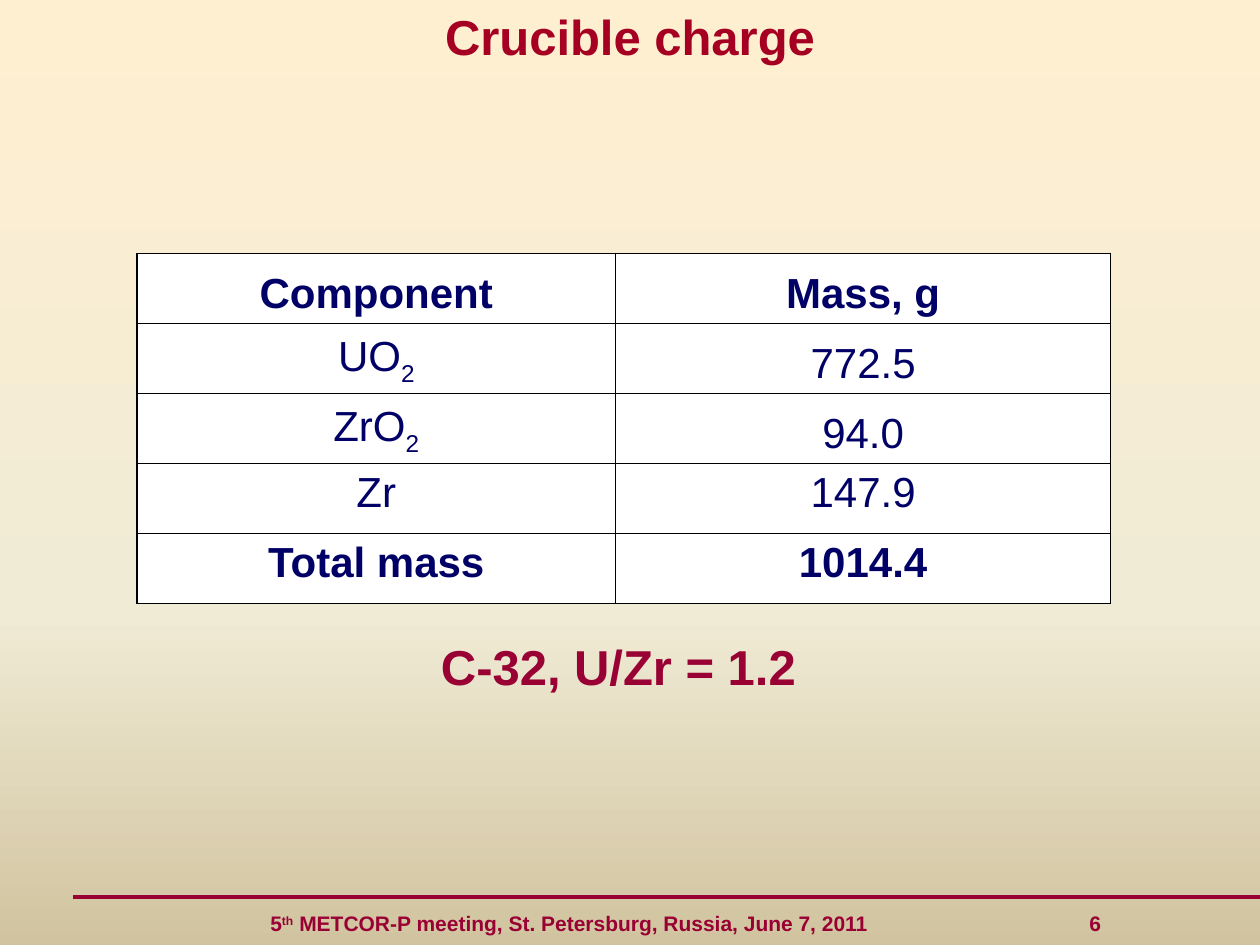
from copy import deepcopy
from dataclasses import dataclass

from lxml.etree import SubElement
from pptx import Presentation
from pptx.dml.color import RGBColor
from pptx.enum.text import MSO_ANCHOR as Anchor, MSO_AUTO_SIZE as AutoSize, PP_ALIGN as Align
from pptx.oxml.ns import qn
from pptx.util import Cm, Pt

FONT = "Arial"
CRIMSON = RGBColor(0x99, 0x00, 0x33)
TITLE_RED = RGBColor(0xA5, 0x00, 0x21)
NAVY = RGBColor(0x00, 0x00, 0x66)
WHITE = RGBColor(0xFF, 0xFF, 0xFF)
BLACK = RGBColor(0x00, 0x00, 0x00)
BACKGROUND = [
    (0, RGBColor(0xFF, 0xEF, 0xD1)),
    (0.65, RGBColor(0xF0, 0xEB, 0xD5)),
    (1, RGBColor(0xD1, 0xC3, 0x9F)),
]


@dataclass
class ChargeRow:
    component: str
    mass: str
    subscript: str = ""
    bold: bool = False
    component_anchor: Anchor = Anchor.BOTTOM
    mass_anchor: Anchor = Anchor.BOTTOM


ROWS = [
    ChargeRow("Component", "Mass, g", bold=True),
    ChargeRow("UO", "772.5", "2"),
    ChargeRow("ZrO", "94.0", "2"),
    ChargeRow("Zr", "147.9", component_anchor=Anchor.TOP, mass_anchor=Anchor.TOP),
    ChargeRow("Total mass", "1014.4", bold=True,
              component_anchor=Anchor.TOP, mass_anchor=Anchor.TOP),
]


def set_font(p, size: float, color: RGBColor, bold: bool = True) -> None:
    p.font.name, p.font.size, p.font.bold = FONT, Pt(size), bold
    p.font.color.rgb = color


def add_run(p, text: str, baseline: int = 0) -> None:
    """Add a run, raised or lowered by a percentage of the font size."""
    r = p.add_run()
    r.text = text
    if baseline:
        r._r.get_or_add_rPr().set("baseline", str(baseline * 1000))


def add_text_box(s, left: float, top: float, width: float, height: float):
    tf = s.shapes.add_textbox(Cm(left), Cm(top), Cm(width), Cm(height)).text_frame
    tf.word_wrap = True
    return tf


def paint_background(s) -> None:
    fill = s.background.fill
    fill.gradient()
    fill.gradient_angle = 270
    stops = s.element.find(".//" + qn("a:gsLst"))
    stops.append(deepcopy(stops[-1]))
    for stop, (position, color) in zip(fill.gradient_stops, BACKGROUND):
        stop.position = position
        stop.color.rgb = color


def add_borders(cell) -> None:
    tc_pr = cell._tc.get_or_add_tcPr()
    for side in ("lnL", "lnR", "lnT", "lnB"):
        ln = SubElement(tc_pr, qn(f"a:{side}"), w=str(Pt(1)))
        SubElement(SubElement(ln, qn("a:solidFill")), qn("a:srgbClr"), val=str(BLACK))


def fill_cell(cell, text: str, subscript: str, bold: bool, anchor: Anchor) -> None:
    add_borders(cell)
    cell.fill.solid()
    cell.fill.fore_color.rgb = WHITE
    cell.vertical_anchor = anchor
    p = cell.text_frame.paragraphs[0]
    p.alignment = Align.CENTER
    set_font(p, 24, NAVY, bold)
    add_run(p, text)
    if subscript:
        add_run(p, subscript, -25)


def add_charge_table(s) -> None:
    table = s.shapes.add_table(len(ROWS), 2, Cm(2.76), Cm(5.11), Cm(19.63), Cm(7.06)).table
    for column, width in zip(table.columns, (9.65, 9.98)):
        column.width = Cm(width)
    for i, row in enumerate(ROWS):
        table.rows[i].height = Cm(1.41)
        fill_cell(table.cell(i, 0), row.component, row.subscript, row.bold, row.component_anchor)
        fill_cell(table.cell(i, 1), row.mass, "", row.bold, row.mass_anchor)


def add_footer(s) -> None:
    rule = s.shapes.add_connector(1, Cm(1.47), Cm(18.08), Cm(25.4), Cm(18.08))
    rule.line.color.rgb = CRIMSON
    rule.line.width = Pt(2.25)
    SubElement(rule._element.spPr, qn("a:effectLst"))

    tf = add_text_box(s, 5.2, 17.98, 18.24, 1.27)
    tf.vertical_anchor = Anchor.MIDDLE
    p = tf.paragraphs[0]
    set_font(p, 12, CRIMSON)
    # The page number sits on a tab stop
    tabs = SubElement(p._p.get_or_add_pPr(), qn("a:tabLst"))
    p._p.pPr.insert(0, tabs)
    SubElement(tabs, qn("a:tab"), pos=str(Cm(16.51)), algn="l")
    add_run(p, "5")
    add_run(p, "th", 30)
    add_run(p, " METCOR-P meeting, St. Petersburg, Russia, June 7, 2011\t6")


def main() -> None:
    prs = Presentation()
    prs.slide_width, prs.slide_height = Cm(25.4), Cm(19.05)
    s = prs.slides.add_slide(prs.slide_layouts[5])
    paint_background(s)
    add_footer(s)

    # Title
    title = s.shapes.title
    title.left, title.top, title.width, title.height = Cm(0), Cm(0), Cm(25.4), Cm(1.65)
    tf = title.text_frame
    tf.text = "Crucible charge"
    tf.auto_size = AutoSize.NONE
    tf.vertical_anchor = Anchor.TOP
    p = tf.paragraphs[0]
    p.alignment = Align.CENTER
    p.space_before = Pt(3)
    set_font(p, 28, TITLE_RED)

    add_charge_table(s)

    # Composition note
    tf = add_text_box(s, 8.64, 12.7, 7.67, 1.45)
    tf.word_wrap = False
    tf.auto_size = AutoSize.SHAPE_TO_FIT_TEXT
    p = tf.paragraphs[0]
    set_font(p, 28, CRIMSON)
    add_run(p, "C-32, U/Zr = 1.2")

    prs.save("out.pptx")


if __name__ == "__main__":
    main()
